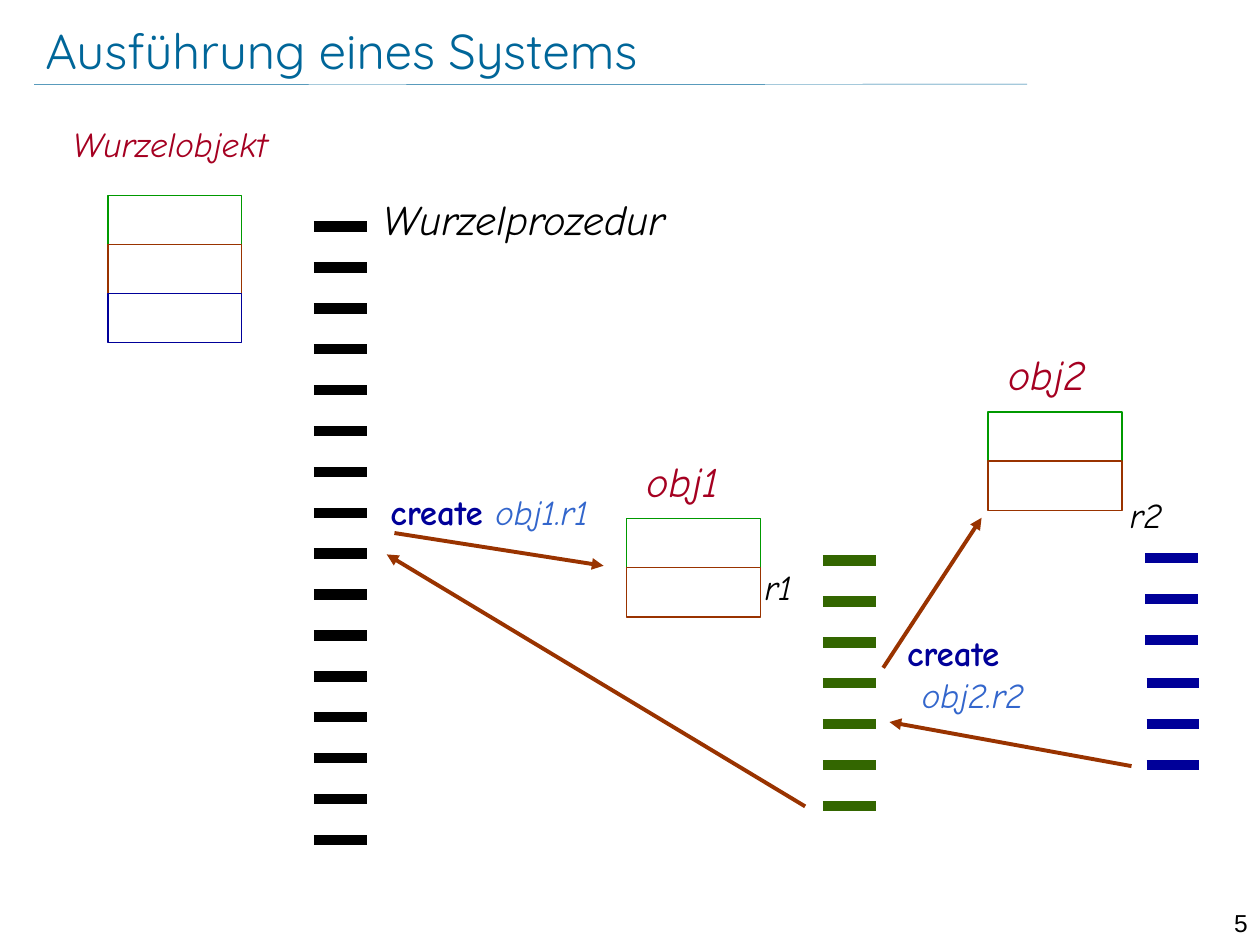
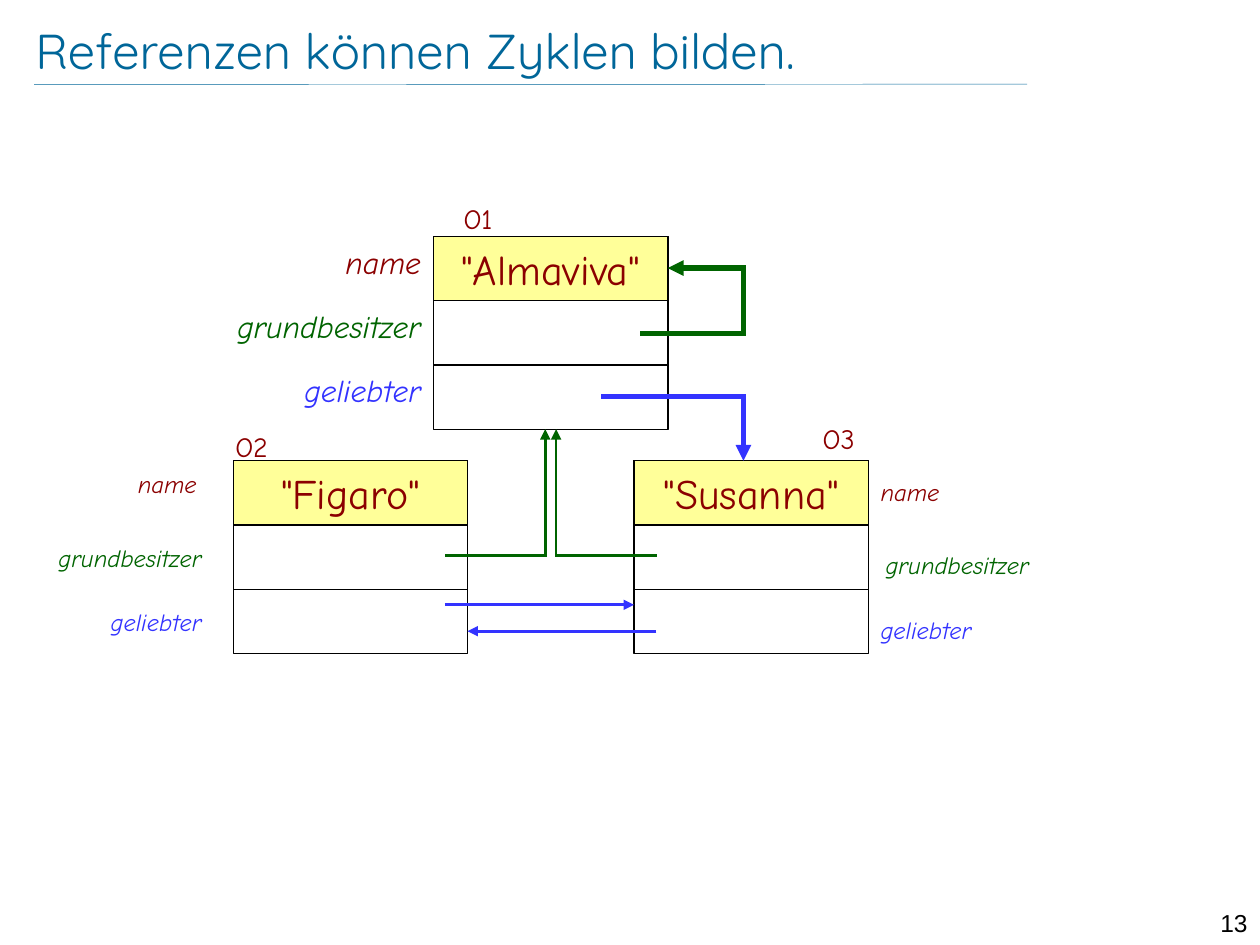
from dataclasses import dataclass

from lxml.etree import SubElement
from pptx import Presentation
from pptx.dml.color import RGBColor
from pptx.enum.shapes import MSO_CONNECTOR as Connector, MSO_SHAPE as Shape
from pptx.enum.text import MSO_ANCHOR as Anchor, PP_ALIGN as Align
from pptx.oxml.ns import qn
from pptx.util import Pt


@dataclass(frozen=True)
class Theme:
    # Colours
    title: str = "006699"
    black: str = "000000"
    crimson: str = "A50021"
    green: str = "009900"
    brown: str = "993300"
    navy: str = "000099"
    blue: str = "3366CC"
    olive: str = "336600"
    maroon: str = "8B0000"
    forest: str = "006400"
    violet: str = "3333FF"
    yellow: str = "FFFF99"
    # Fonts
    title_font: str = "Quicksand"
    body_font: str = "Comic Neue"
    number_font: str = "Arial"
    # Type sizes
    title_size: int = 28
    big: int = 24
    medium: int = 20
    field: int = 18
    ident: int = 16
    small: int = 14


THEME = Theme()


class Deck:
    def __init__(self, theme):
        self.theme = theme
        self.deck = Presentation()
        self.deck.slide_width, self.deck.slide_height = Pt(720), Pt(540)
        self.page = None

    def add_page(self, title, number, title_left):
        """Start a slide with its title, rule and page number."""
        theme = self.theme
        self.page = self.deck.slides.add_slide(self.deck.slide_layouts[6])
        self.line((19.5, 48.4), (587, 48.1), theme.title, 0.25)
        self.text(680.4, 515.5, number, theme.small, theme.black, width=39.6,
                  font=theme.number_font, align=Align.RIGHT)
        box = self.text(title_left, 11, title, theme.title_size, theme.title,
                        width=560, font=theme.title_font)
        box.height = Pt(35)
        frame = box.text_frame
        frame.vertical_anchor = Anchor.MIDDLE
        frame.margin_left = frame.margin_right = 0
        frame.margin_top = frame.margin_bottom = 0

    def style(self, font, size, colour, name=None, bold=None, italic=None):
        font.name = name or self.theme.body_font
        font.size = Pt(size)
        font.bold, font.italic = bold, italic
        font.color.rgb = RGBColor.from_string(colour)

    def text(self, left, top, words, size, colour, width=180, font=None,
             italic=False, align=Align.LEFT):
        box = self.page.shapes.add_textbox(Pt(left), Pt(top), Pt(width),
                                           Pt(size * 1.2 + 7.2))
        box.text_frame.word_wrap = True
        para = box.text_frame.paragraphs[0]
        para.text, para.alignment = words, align
        self.style(para.font, size, colour, font, italic=italic)
        return box

    def create_call(self, left, top, target, broken=False):
        """Write the bold keyword and its target, on one line or two."""
        theme = self.theme
        box = self.page.shapes.add_textbox(Pt(left), Pt(top), Pt(190),
                                           Pt(55 if broken else 31))
        frame = box.text_frame
        frame.word_wrap = True
        para = frame.paragraphs[0]
        span = para.add_run()
        span.text = "create" if broken else "create "
        self.style(span.font, theme.medium, theme.navy, bold=True)
        if broken:
            para = frame.add_paragraph()
            para._p.get_or_add_pPr().set("marL", str(Pt(8.5)))
        span = para.add_run()
        span.text = target
        self.style(span.font, theme.medium, theme.blue, italic=True)

    def box(self, left, top, width, height, line, fill=None):
        shape = self.page.shapes.add_shape(Shape.RECTANGLE, Pt(left), Pt(top),
                                           Pt(width), Pt(height))
        shape.shadow.inherit = False
        if fill:
            shape.fill.solid()
            shape.fill.fore_color.rgb = RGBColor.from_string(fill)
        else:
            shape.fill.background()
        shape.line.color.rgb = RGBColor.from_string(line)
        shape.line.width = Pt(0.75)
        return shape

    def line(self, start, end, colour, width, arrow=False, square=False):
        link = self.page.shapes.add_connector(
            Connector.STRAIGHT, *(Pt(value) for value in (*start, *end)))
        link.line.color.rgb = RGBColor.from_string(colour)
        link.line.width = Pt(width)
        stroke = link.line._get_or_add_ln()
        if square:
            stroke.set("cap", "sq")
        if arrow:
            SubElement(stroke, qn("a:tailEnd"), type="triangle")
        SubElement(link._element.spPr, qn("a:effectLst"))

    def route(self, points, colour, width):
        """Draw joined segments that end in an arrowhead."""
        last = len(points) - 2
        for index, (start, end) in enumerate(zip(points, points[1:])):
            self.line(start, end, colour, width, arrow=index == last,
                      square=index < last)

    def dashes(self, left, top, count, colour):
        """Stack the steps of a running procedure."""
        for index in range(count):
            y = top + index * 23.36
            self.line((left, y), (left + 30.2, y), colour, 6)

    def cells(self, left, top, colours):
        """Stack the empty fields of an object."""
        for index, colour in enumerate(colours):
            self.box(left, top + index * 28.08, 76.5, 28.08, colour)

    def record(self, left, top, name):
        """Draw an object with a named head and two reference fields."""
        theme, width, row = self.theme, 134, 36.7
        head = self.box(left, top, width, row, theme.black, theme.yellow)
        head.text_frame.vertical_anchor = Anchor.MIDDLE
        para = head.text_frame.paragraphs[0]
        para.text, para.alignment = name, Align.CENTER
        self.style(para.font, theme.big, theme.maroon)
        self.box(left, top, width, 3 * row, theme.black)
        for y in (top + row, top + 2 * row):
            self.line((left, y), (left + width, y), theme.black, 0.75)

    def field_labels(self, places, size, align):
        """Name the three fields of a record; places are (left, top)."""
        theme, width = self.theme, 140
        names = (("name", theme.maroon), ("grundbesitzer", theme.forest),
                 ("geliebter", theme.violet))
        for (edge, top), (name, colour) in zip(places, names):
            left = edge - width if align == Align.RIGHT else edge
            self.text(left, top, name, size, colour, width, italic=True,
                      align=align)


def build_execution(deck):
    theme = deck.theme
    deck.add_page("Ausführung eines Systems", "5", 25.9)

    # Objects
    deck.cells(61.7, 111.6, (theme.green, theme.brown, theme.navy))
    deck.text(34.6, 66.2, "Wurzelobjekt", theme.medium, theme.crimson,
              italic=True)
    for name, left, top in (("obj1", 358, 296.4), ("obj2", 564.6, 235.4)):
        deck.cells(left, top, (theme.green, theme.brown))
        deck.text(left + 4.3, top - 39.5, name, theme.big, theme.crimson,
                  width=120, italic=True)

    # Procedures
    deck.dashes(179.3, 129.5, 16, theme.black)
    deck.dashes(470.2, 320.3, 7, theme.olive)
    deck.dashes(654.5, 318.9, 3, theme.navy)
    deck.dashes(655.2, 390.4, 3, theme.navy)
    deck.text(211.7, 107.3, "Wurzelprozedur", theme.big, theme.black,
              width=200, italic=True)
    deck.text(429.8, 319.7, "r1", theme.medium, theme.black, 60, italic=True)
    deck.text(638.6, 278.6, "r2", theme.medium, theme.black, 60, italic=True)

    # Calls and returns
    for start, end in (((225.4, 304.6), (344.9, 323.3)),
                       ((504.7, 381.6), (560.9, 295.9)),
                       ((460.1, 460.8), (221, 316.8)),
                       ((646.6, 437.8), (508.3, 412.6))):
        deck.line(start, end, theme.brown, 2.25, arrow=True)
    deck.create_call(216, 276.5, "obj1.r1")
    deck.create_call(511.2, 357.1, "obj2.r2", broken=True)


def build_cycles(deck):
    theme = deck.theme
    deck.add_page("Referenzen können Zyklen bilden.", "13", 20.2)

    # Records and their identities
    for name, left, top in (('"Almaviva"', 247.7, 135.2),
                            ('"Figaro"', 133.3, 263.3),
                            ('"Susanna"', 362.3, 263.3)):
        deck.record(left, top, name)
    for name, left, top in (("O1", 257.8, 111.6), ("O2", 127.4, 241.9),
                            ("O3", 463, 237.6)):
        deck.text(left, top, name, theme.ident, theme.maroon, width=45)

    # Field names
    deck.field_labels([(247.7, 135.2 + row * 36.5) for row in range(3)],
                      theme.field, Align.RIGHT)
    deck.field_labels(((119.5, 264.2), (122.4, 306.7), (122.4, 343.4)),
                      theme.small, Align.RIGHT)
    deck.field_labels(((496.1, 269.3), (499, 311), (496.1, 347.8)),
                      theme.small, Align.LEFT)

    # References to the landowner
    deck.route(((367.3, 190.6), (424.8, 190.6), (424.8, 153.2),
                (381.6, 153.2)), theme.forest, 3)
    for start, turn in ((254.9, 311.6), (374.4, 317.8)):
        deck.route(((start, 317.5), (turn, 317.5), (turn, 245.2)),
                   theme.forest, 1.5)

    # References to the beloved
    deck.route(((345, 226.6), (424.8, 226.6), (424.8, 263.3)),
               theme.violet, 3)
    deck.route(((254.2, 345.6), (362.3, 345.6)), theme.violet, 1.5)
    deck.route(((375.1, 360.7), (267.1, 360.7)), theme.violet, 1.5)


def main():
    deck = Deck(THEME)
    build_execution(deck)
    build_cycles(deck)
    deck.deck.save("out.pptx")


if __name__ == "__main__":
    main()
